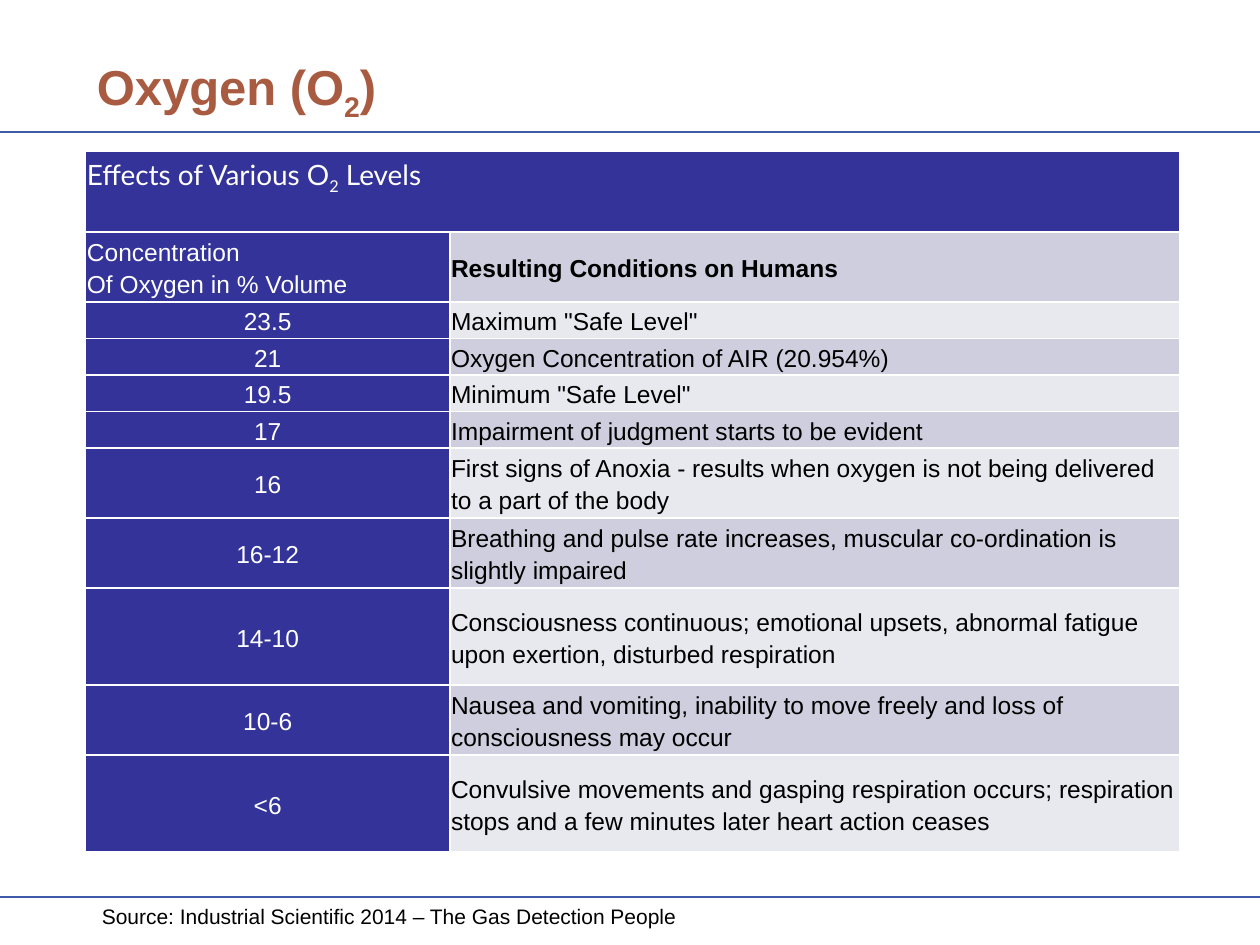
import pptx
import pptx.util
import pptx.dml.color
import pptx.enum.shapes
import pptx.enum.text
import pptx.oxml
import pptx.oxml.ns

Inches, Pt = pptx.util.Inches, pptx.util.Pt
RGBColor = pptx.dml.color.RGBColor
ALIGN = pptx.enum.text.PP_ALIGN
ANCHOR = pptx.enum.text.MSO_ANCHOR

WHITE = RGBColor(0xFF, 0xFF, 0xFF)
BLACK = RGBColor(0, 0, 0)
RULE = RGBColor(0x3F, 0x5A, 0xA8)
RUST = RGBColor(0xA8, 0x5B, 0x41)
INDIGO = RGBColor(0x33, 0x33, 0x99)
BANDS = [RGBColor(0xCE, 0xCE, 0xDE), RGBColor(0xE8, 0xE8, 0xEF)]

TITLE = "Oxygen (O|2|)"
SOURCE = "Source: Industrial Scientific 2014 – The Gas Detection People"
HEADING = "Effects of Various O|2| Levels"
HEADING_HEIGHT = 0.64
COLUMNS = [2.89, 5.79]
ONE, TWO, TALL = 0.29, 0.52, 0.77
LEVELS = [
    ("Concentration\vOf Oxygen in % Volume", "Resulting Conditions on Humans", TWO),
    ("23.5", 'Maximum "Safe Level"', ONE),
    ("21", "Oxygen Concentration of AIR (20.954%)", ONE),
    ("19.5", 'Minimum "Safe Level"', ONE),
    ("17", "Impairment of judgment starts to be evident", ONE),
    ("16", "First signs of Anoxia - results when oxygen is not being delivered "
           "to a part of the body", TWO),
    ("16-12", "Breathing and pulse rate increases, muscular co-ordination is "
              "slightly impaired", TWO),
    ("14-10", "Consciousness continuous; emotional upsets, abnormal fatigue upon "
              "exertion, disturbed respiration", TALL),
    ("10-6", "Nausea and vomiting, inability to move freely and loss of "
             "consciousness may occur", TWO),
    ("<6", "Convulsive movements and gasping respiration occurs; respiration "
           "stops and a few minutes later heart action ceases", TALL),
]


def write(tf, text, size, color, font="Arial", bold=False, align=ALIGN.LEFT, spacing=None):
    p = tf.paragraphs[0]
    first, *rest = text.split("|")
    p.text = first
    for i, part in enumerate(rest):
        r = p.add_run()
        r.text = part
        if i % 2 == 0:
            r.font._element.set("baseline", "-25000")
    p.alignment = align
    p.line_spacing = spacing
    for r in p.runs:
        r.font.size, r.font.name, r.font.bold = Pt(size), font, bold
        r.font.color.rgb = color


def add_text(s, box, text, size, color, anchor=ANCHOR.TOP, **style):
    tf = s.shapes.add_textbox(*map(Inches, box)).text_frame
    tf.word_wrap = True
    tf.vertical_anchor = anchor
    write(tf, text, size, color, **style)


def add_rule(s, y):
    line = s.shapes.add_connector(
        pptx.enum.shapes.MSO_CONNECTOR.STRAIGHT, 0, Inches(y), Inches(10), Inches(y))
    line.line.color.rgb = RULE
    line.line.width = Pt(1)
    line._element.spPr.append(pptx.oxml.parse_xml(
        f'<a:effectLst {pptx.oxml.ns.nsdecls("a")}/>'))


def fill_cell(cell, text, size, fill, color, anchor=ANCHOR.MIDDLE, **style):
    cell.margin_left = cell.margin_right = Inches(0.01)
    cell.margin_top = cell.margin_bottom = Inches(0.01)
    cell.vertical_anchor = anchor
    write(cell.text_frame, text, size, color, spacing=1.15, **style)
    tcPr = cell._tc.get_or_add_tcPr()
    for side in ("lnL", "lnR", "lnT", "lnB"):
        tcPr.append(pptx.oxml.parse_xml(
            f'<a:{side} {pptx.oxml.ns.nsdecls("a")} w="12700"><a:solidFill>'
            f'<a:srgbClr val="{WHITE}"/></a:solidFill></a:{side}>'))
    cell.fill.solid()
    cell.fill.fore_color.rgb = fill


def add_levels(s):
    heights = [HEADING_HEIGHT] + [height for _, _, height in LEVELS]
    box = map(Inches, (0.68, 1.2, sum(COLUMNS), sum(heights)))
    table = s.shapes.add_table(len(heights), len(COLUMNS), *box).table
    for column, width in zip(table.columns, COLUMNS):
        column.width = Inches(width)
    for row, height in zip(table.rows, heights):
        row.height = Inches(height)
    table.cell(0, 0).merge(table.cell(0, 1))
    fill_cell(table.cell(0, 0), HEADING, 16, INDIGO, WHITE, ANCHOR.TOP, font="Lato")
    for i, (level, effect, _) in enumerate(LEVELS):
        header = i == 0
        fill_cell(table.cell(i + 1, 0), level, 14, INDIGO, WHITE,
                  align=ALIGN.LEFT if header else ALIGN.CENTER)
        fill_cell(table.cell(i + 1, 1), effect, 14, BANDS[i % 2], BLACK, bold=header)


def main():
    prs = pptx.Presentation()
    prs.slide_width, prs.slide_height = Inches(10), Inches(7.5)
    s = prs.slides.add_slide(prs.slide_layouts[6])
    for y in (1.05, 7.12):
        add_rule(s, y)
    add_text(s, (0.67, 0.3, 7.8, 0.73), TITLE, 28, RUST, ANCHOR.BOTTOM,
             bold=True, spacing=Pt(30))
    add_levels(s)
    add_text(s, (0.71, 7.12, 8.62, 0.3), SOURCE, 12, BLACK)
    prs.save("out.pptx")


if __name__ == "__main__":
    main()
